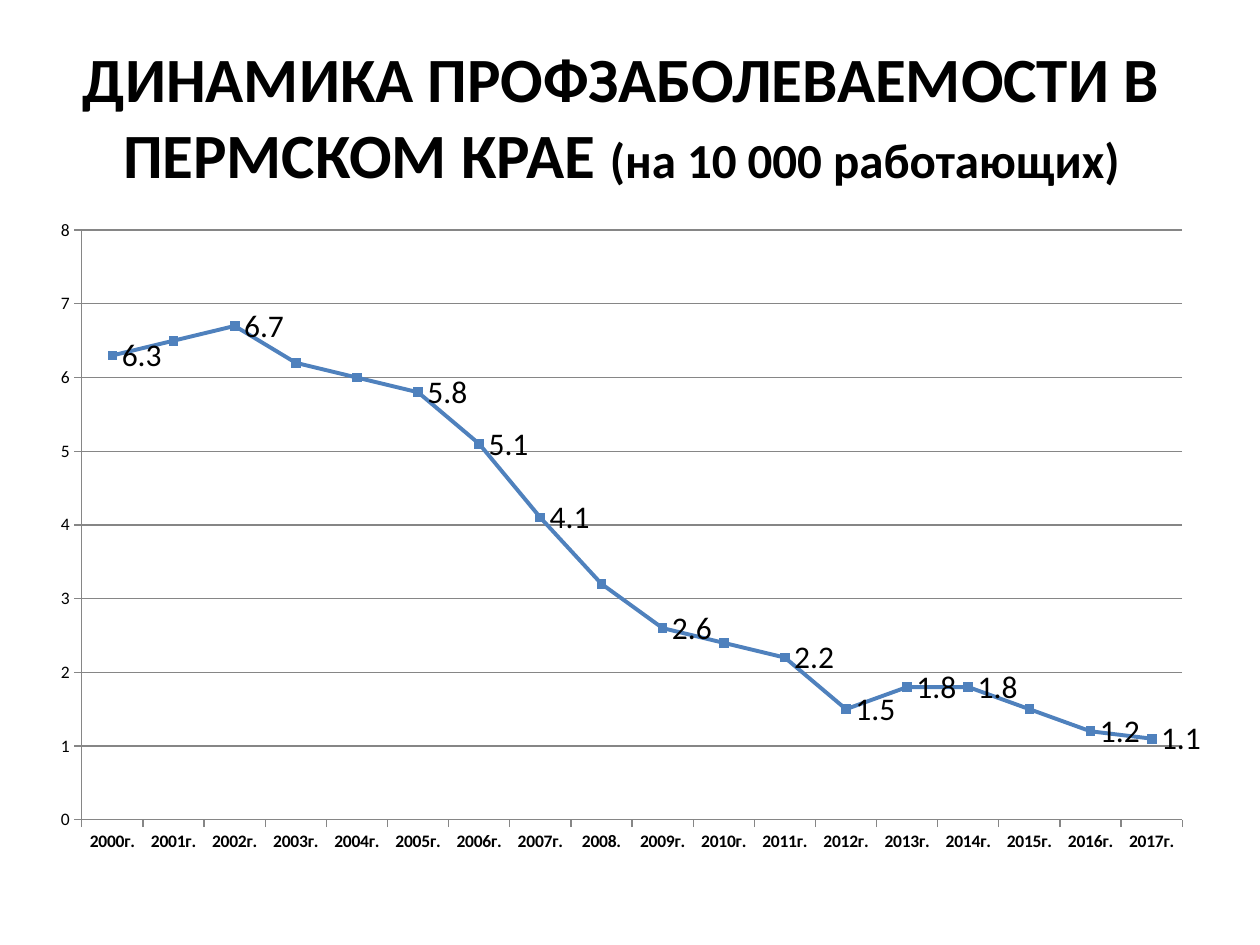
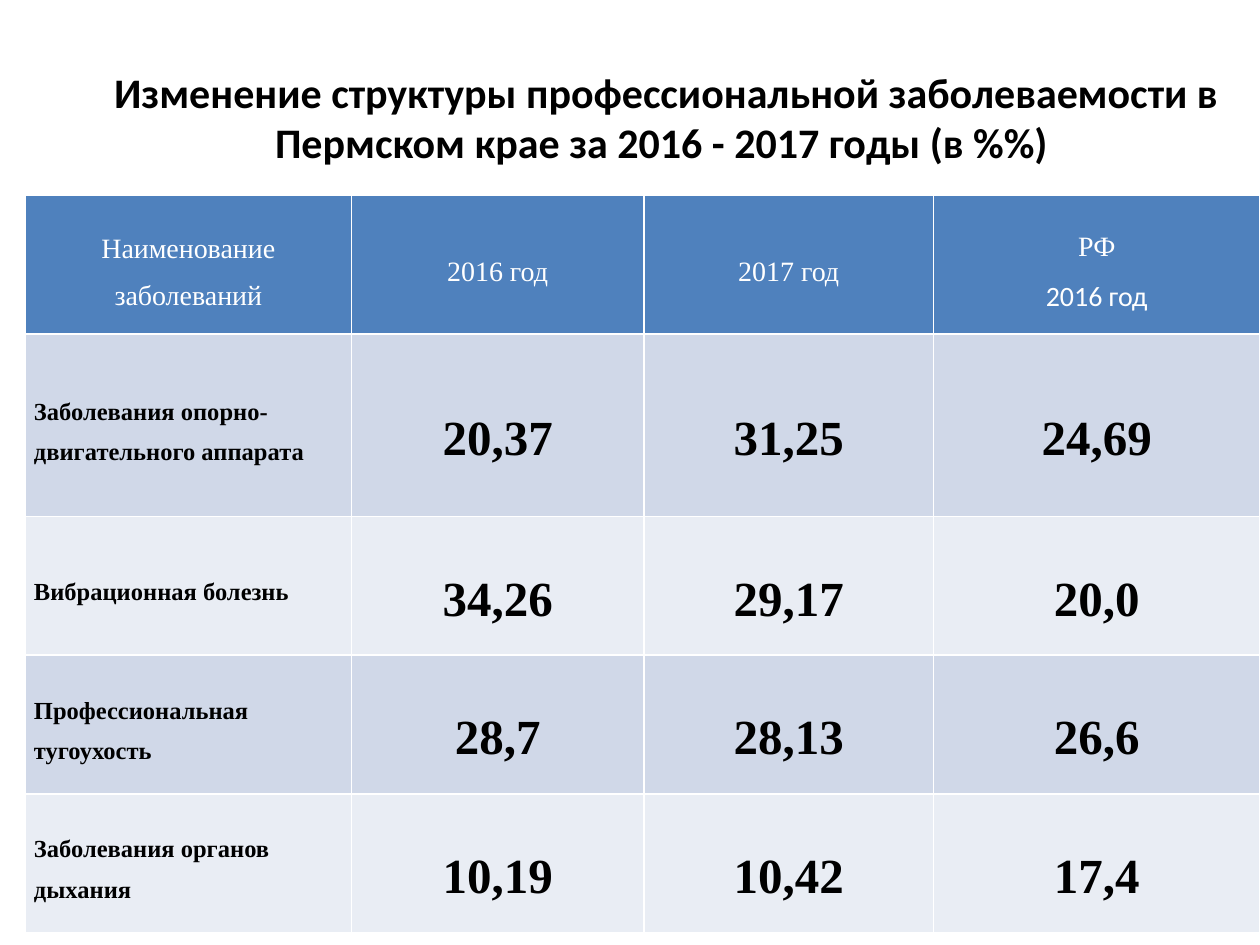
import pptx
import pptx.util
import pptx.chart.data
import pptx.dml.color
import pptx.enum.chart
import pptx.enum.text
import pptx.oxml

Pt = pptx.util.Pt
ALIGN = pptx.enum.text.PP_ALIGN
MIDDLE = pptx.enum.text.MSO_ANCHOR.MIDDLE
SANS, SERIF = "Calibri", "Times New Roman"
BLACK, WHITE, BLUE, GRID = "000000", "FFFFFF", "4F81BD", "868686"
BANDS = ("D0D8E8", "E9EDF4")

RATE_TITLE = [("ДИНАМИКА ПРОФЗАБОЛЕВАЕМОСТИ В ПЕРМСКОМ КРАЕ ", 36),
              ("(на 10 000 работающих)", 28)]
RATE_BY_YEAR = {
    "2000г.": 6.3, "2001г.": 6.5, "2002г.": 6.7, "2003г.": 6.2, "2004г.": 6, "2005г.": 5.8,
    "2006г.": 5.1, "2007г.": 4.1, "2008.": 3.2, "2009г.": 2.6, "2010г.": 2.4, "2011г.": 2.2,
    "2012г.": 1.5, "2013г.": 1.8, "2014г.": 1.8, "2015г.": 1.5, "2016г.": 1.2, "2017г.": 1.1,
}
UNLABELLED = ("2001г.", "2003г.", "2004г.", "2008.", "2010г.", "2015г.")
PLOT_AREA = {"x": 0.04, "y": 0.04, "w": 0.94, "h": 0.9}

SHARE_TITLE = [(" Изменение структуры профессиональной заболеваемости "
                "в Пермском крае за 2016 - 2017 годы (в %%)", 24)]
HEADER = [[("Наименование заболеваний", SERIF)], [("2016 год", SERIF)],
          [("2017 год", SERIF)], [("РФ", SERIF), ("2016 год", SANS)]]
SHARES = [
    ("Заболевания опорно-двигательного аппарата", "20,37", "31,25", "24,69"),
    ("Вибрационная болезнь", "34,26", "29,17", "20,0"),
    ("Профессиональная тугоухость", "28,7", "28,13", "26,6"),
    ("Заболевания органов дыхания", "10,19", "10,42", "17,4"),
]
COL_WIDTHS = (186.5, 167, 165.6, 186.5)
ROW_HEIGHTS = (79.2, 104.4, 79.2, 79.2, 79.2)


def rgb(color):
    return pptx.dml.color.RGBColor.from_string(color)


def apply(obj, **values):
    for name, value in values.items():
        setattr(obj, name, value)


def style_font(font, size, color=BLACK, bold=False, name=SANS):
    apply(font, size=Pt(size), bold=bold, name=name)
    font.color.rgb = rgb(color)


def style_line(line, color, width):
    line.color.rgb = rgb(color)
    line.width = Pt(width)


def add_title(s, runs, left, top, width, height):
    tf = s.shapes.add_textbox(Pt(left), Pt(top), Pt(width), Pt(height)).text_frame
    apply(tf, word_wrap=True, vertical_anchor=MIDDLE)
    p = tf.paragraphs[0]
    p.alignment = ALIGN.CENTER
    for text, size in runs:
        r = p.add_run()
        r.text = text
        style_font(r.font, size, bold=True)


def chart_xml(xml):
    return pptx.oxml.parse_xml(xml.replace(
        ">", ' xmlns:c="http://schemas.openxmlformats.org/drawingml/2006/chart">', 1))


def fix_plot_area(chart):
    area = chart._chartSpace.chart.plotArea
    for child in list(area):
        if child.tag.endswith("}layout"):
            area.remove(child)
    modes = '<c:layoutTarget val="inner"/><c:xMode val="edge"/><c:yMode val="edge"/>'
    sizes = "".join(f'<c:{key} val="{value}"/>' for key, value in PLOT_AREA.items())
    area.insert(0, chart_xml(
        f"<c:layout><c:manualLayout>{modes}{sizes}</c:manualLayout></c:layout>"))


def add_rate_chart(s):
    data = pptx.chart.data.CategoryChartData()
    data.categories = list(RATE_BY_YEAR)
    data.add_series("Series 1", list(RATE_BY_YEAR.values()))
    chart = s.shapes.add_chart(pptx.enum.chart.XL_CHART_TYPE.LINE_MARKERS,
                               Pt(20), Pt(116.6), Pt(669), Pt(374.4), data).chart
    apply(chart, has_legend=False, has_title=False)
    style_font(chart.font, 10)
    fix_plot_area(chart)

    for axis, bold in ((chart.category_axis, True), (chart.value_axis, False)):
        axis.major_tick_mark = pptx.enum.chart.XL_TICK_MARK.OUTSIDE
        style_font(axis.tick_labels.font, 10, bold=bold)
        style_line(axis.format.line, GRID, 0.75)
    apply(chart.value_axis, minimum_scale=0, maximum_scale=8, major_unit=1,
          has_major_gridlines=True)
    style_line(chart.value_axis.major_gridlines.format.line, GRID, 0.75)

    plot = chart.plots[0]
    plot.vary_by_categories = False
    series = plot.series[0]
    series.smooth = False
    style_line(series.format.line, BLUE, 2.25)
    apply(series.marker, style=pptx.enum.chart.XL_MARKER_STYLE.SQUARE, size=5)
    series.marker.format.fill.solid()
    series.marker.format.fill.fore_color.rgb = rgb(BLUE)
    style_line(series.marker.format.line, BLUE, 0.75)

    labels = series.data_labels
    apply(labels, show_value=True, position=pptx.enum.chart.XL_LABEL_POSITION.RIGHT)
    style_font(labels.font, 18)
    years = list(RATE_BY_YEAR)
    for place, year in enumerate(UNLABELLED):
        labels._element.insert(place, chart_xml(
            f'<c:dLbl><c:idx val="{years.index(year)}"/><c:delete val="1"/></c:dLbl>'))


def fill_cell(cell, lines, fill, size, color, bold, align, space=0):
    apply(cell, vertical_anchor=MIDDLE, margin_left=Pt(5), margin_right=Pt(5),
          margin_top=0, margin_bottom=0)
    cell.fill.solid()
    cell.fill.fore_color.rgb = rgb(fill)
    tf = cell.text_frame
    for i, (text, font) in enumerate(lines):
        p = tf.add_paragraph() if i else tf.paragraphs[0]
        apply(p, alignment=align, line_spacing=1.5, space_before=Pt(space),
              space_after=Pt(space))
        r = p.add_run()
        r.text = text
        style_font(r.font, size, color, bold, font)


def add_share_table(s):
    table = s.shapes.add_table(len(ROW_HEIGHTS), len(COL_WIDTHS), Pt(14.4), Pt(111.6),
                               Pt(sum(COL_WIDTHS)), Pt(sum(ROW_HEIGHTS))).table
    for col, width in zip(table.columns, COL_WIDTHS):
        col.width = Pt(width)
    for row, height in zip(table.rows, ROW_HEIGHTS):
        row.height = Pt(height)
    for j, lines in enumerate(HEADER):
        fill_cell(table.cell(0, j), lines, BLUE, 16, WHITE, False, ALIGN.CENTER)
    for i, (disease, *shares) in enumerate(SHARES):
        fill = BANDS[i % 2]
        fill_cell(table.cell(i + 1, 0), [(disease, SERIF)], fill, 14, BLACK, True,
                  ALIGN.LEFT, 3)
        for j, share in enumerate(shares, 1):
            fill_cell(table.cell(i + 1, j), [(share, SERIF)], fill, 28, BLACK, True,
                      ALIGN.CENTER)


def main():
    prs = pptx.Presentation()
    apply(prs, slide_width=Pt(720), slide_height=Pt(540))
    blank = prs.slide_layouts[6]

    s = prs.slides.add_slide(blank)
    add_title(s, RATE_TITLE, 31, 21, 648, 90)
    add_rate_chart(s)

    s = prs.slides.add_slide(blank)
    add_title(s, SHARE_TITLE, 36, 21.6, 684, 90)
    add_share_table(s)

    prs.save("out.pptx")


if __name__ == "__main__":
    main()
